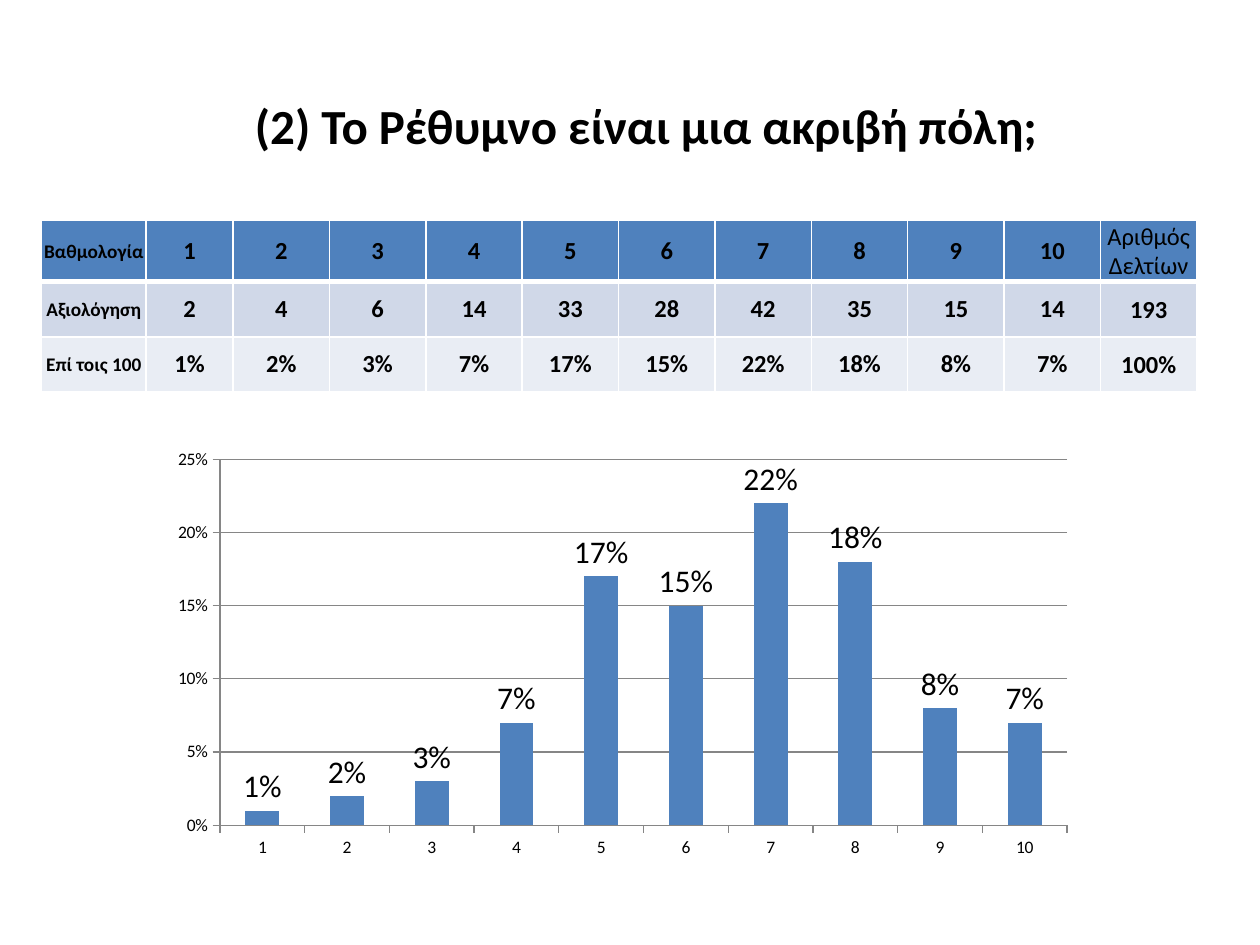
from dataclasses import dataclass
from lxml.etree import SubElement
from pptx import Presentation
from pptx.chart.data import CategoryChartData
from pptx.dml.color import RGBColor
from pptx.enum.chart import XL_CHART_TYPE, XL_LABEL_POSITION, XL_TICK_MARK
from pptx.enum.text import MSO_ANCHOR, MSO_AUTO_SIZE, PP_ALIGN
from pptx.oxml import parse_xml
from pptx.oxml.ns import nsdecls, qn
from pptx.util import Inches, Pt

TITLE = "(2) Το Ρέθυμνο είναι μια ακριβή πόλη; "
GRADES = [str(grade) for grade in range(1, 11)]
VOTES = [2, 4, 6, 14, 33, 28, 42, 35, 15, 14]
PERCENTS = [1, 2, 3, 7, 17, 15, 22, 18, 8, 7]
ROWS = [
    ["Βαθμολογία ", *GRADES, "Αριθμός Δελτίων"],
    ["Αξιολόγηση", *map(str, VOTES), str(sum(VOTES))],
    ["Επί τοις 100", *(f"{percent}%" for percent in PERCENTS), "100%"],
]
COLUMN_WIDTHS = [0.83, 0.69] + [0.765] * 10
ROW_HEIGHT = 0.44
PLOT_AREA = {"x": 0.076, "y": 0.064, "w": 0.887, "h": 0.828}


@dataclass(frozen=True)
class Theme:
    font: str = "Calibri"
    text: str = "000000"
    accent: str = "4F81BD"
    border: str = "FFFFFF"
    line: str = "868686"
    row_fills: tuple = ("4F81BD", "D0D8E8", "E9EDF4")
    title_size: int = 28
    cell_size: int = 14
    heading_size: int = 11
    axis_size: int = 10
    label_size: int = 18


THEME = Theme()


def format_font(font, size, bold=False):
    font.name = THEME.font
    font.size = Pt(size)
    font.bold = bold
    font.color.rgb = RGBColor.from_string(THEME.text)


def write(frame, text, *, size, bold=True):
    frame.word_wrap = True
    para = frame.paragraphs[0]
    para.alignment = PP_ALIGN.CENTER
    span = para.add_run()
    span.text = text
    format_font(span.font, size, bold)


def set_borders(cell, **widths):
    properties = cell._tc.get_or_add_tcPr()
    for index, (side, width) in enumerate(widths.items()):
        properties.insert(index, parse_xml(
            f'<a:ln{side} {nsdecls("a")} w="{Pt(width)}"><a:solidFill>'
            f'<a:srgbClr val="{THEME.border}"/></a:solidFill></a:ln{side}>'))


def add_title(page):
    box = page.shapes.title
    box.left, box.top, box.width, box.height = map(Inches, (0.67, 0.58, 9, 0.83))
    frame = box.text_frame
    frame.auto_size = MSO_AUTO_SIZE.NONE
    frame.vertical_anchor = MSO_ANCHOR.MIDDLE
    write(frame, TITLE, size=THEME.title_size)


def add_score_table(page):
    last_column = len(COLUMN_WIDTHS) - 1
    table = page.shapes.add_table(
        len(ROWS), len(COLUMN_WIDTHS), Inches(0.33), Inches(1.75),
        Inches(sum(COLUMN_WIDTHS)), Inches(ROW_HEIGHT * len(ROWS))).table
    for column, width in zip(table.columns, COLUMN_WIDTHS):
        column.width = Inches(width)
    for row_index, texts in enumerate(ROWS):
        table.rows[row_index].height = Inches(ROW_HEIGHT)
        for column_index, text in enumerate(texts):
            cell = table.cell(row_index, column_index)
            edge = row_index == 0 or column_index in (0, last_column)
            inset = Inches(0.01 if edge else 0)
            cell.margin_left = cell.margin_right = cell.margin_top = inset
            cell.margin_bottom = 0
            cell.vertical_anchor = MSO_ANCHOR.MIDDLE
            cell.fill.solid()
            cell.fill.fore_color.rgb = RGBColor.from_string(THEME.row_fills[row_index])
            set_borders(cell, L=1, R=1, T=3 if row_index == 1 else 1,
                        B=3 if row_index == 0 else 1)
            write(cell.text_frame, text,
                  size=THEME.cell_size if column_index else THEME.heading_size,
                  bold=(row_index, column_index) != (0, last_column))


def place_plot(chart):
    plot_area = chart._chartSpace.chart.plotArea
    for old in plot_area.findall(qn("c:layout")):
        plot_area.remove(old)
    layout = parse_xml(f'<c:layout {nsdecls("c")}/>')
    manual = SubElement(layout, qn("c:manualLayout"))
    settings = {"layoutTarget": "inner", "xMode": "edge", "yMode": "edge", **PLOT_AREA}
    for name, value in settings.items():
        SubElement(manual, qn(f"c:{name}")).set("val", str(value))
    plot_area.insert(0, layout)


def add_percent_chart(page):
    data = CategoryChartData(number_format="0%")
    data.categories = GRADES
    data.add_series("Series 1", [percent / 100 for percent in PERCENTS])
    chart = page.shapes.add_chart(
        XL_CHART_TYPE.COLUMN_CLUSTERED, Inches(1.17), Inches(3.42),
        Inches(7.58), Inches(3.51), data).chart
    chart.has_legend = False
    chart.has_title = False
    format_font(chart.font, THEME.axis_size)
    place_plot(chart)

    values = chart.value_axis
    values.minimum_scale, values.maximum_scale, values.major_unit = 0, 0.25, 0.05
    values.has_major_gridlines = True
    values.tick_labels.number_format = "0%"
    values.tick_labels.number_format_is_linked = False
    for axis in (chart.category_axis, values):
        axis.major_tick_mark = XL_TICK_MARK.OUTSIDE
        axis.minor_tick_mark = XL_TICK_MARK.NONE
        format_font(axis.tick_labels.font, THEME.axis_size)
    for part in (chart.category_axis, values, values.major_gridlines):
        part.format.line.color.rgb = RGBColor.from_string(THEME.line)
        part.format.line.width = Pt(0.75)

    plot = chart.plots[0]
    plot.gap_width = 150
    plot.vary_by_categories = False
    fill = plot.series[0].format.fill
    fill.solid()
    fill.fore_color.rgb = RGBColor.from_string(THEME.accent)
    plot.has_data_labels = True
    labels = plot.data_labels
    labels.show_value = True
    labels.number_format = "0%"
    labels.number_format_is_linked = False
    labels.position = XL_LABEL_POSITION.OUTSIDE_END
    format_font(labels.font, THEME.label_size)


def main():
    deck = Presentation()
    deck.slide_width, deck.slide_height = Inches(10), Inches(7.5)
    page = deck.slides.add_slide(deck.slide_layouts[5])
    add_score_table(page)
    add_title(page)
    add_percent_chart(page)
    deck.save("out.pptx")


if __name__ == "__main__":
    main()
